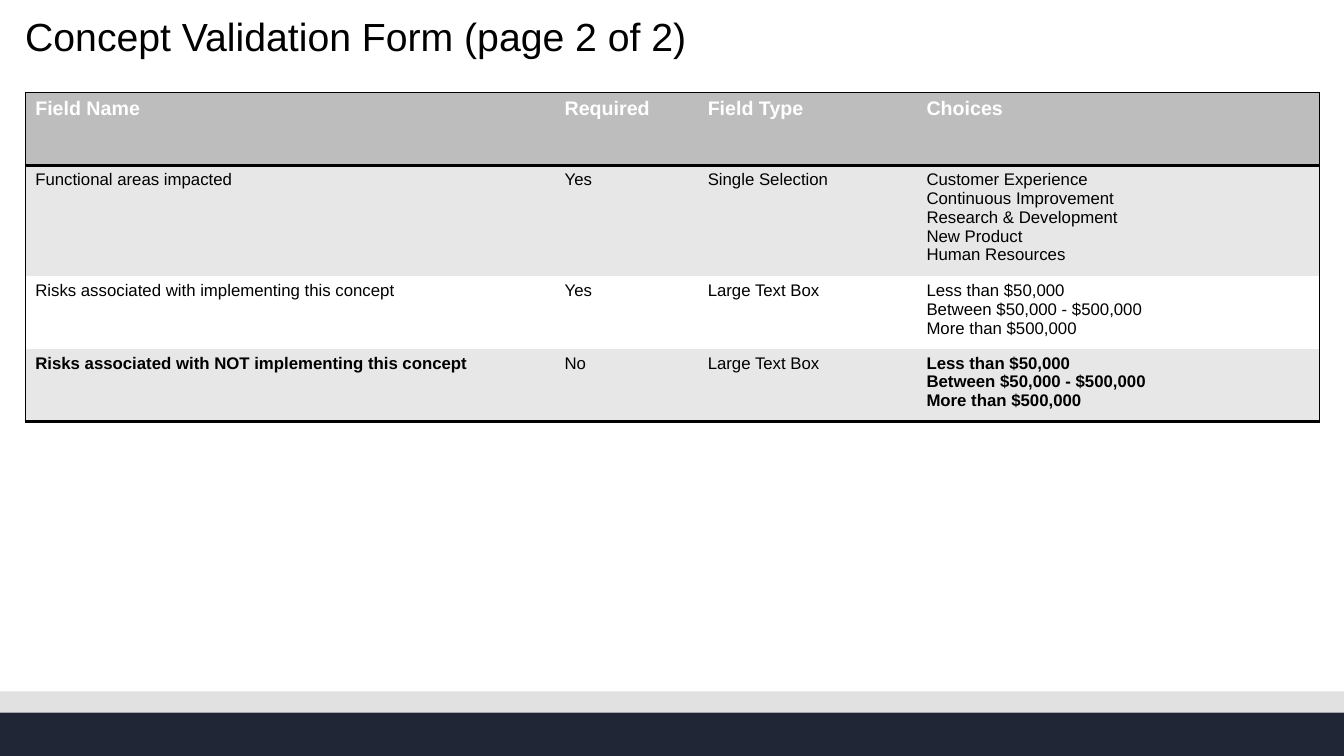
from pptx import Presentation
from pptx.dml.color import RGBColor
from pptx.enum.shapes import MSO_SHAPE
from pptx.enum.text import MSO_ANCHOR
from pptx.oxml import parse_xml
from pptx.oxml.ns import nsdecls
from pptx.util import Inches, Pt

WIDE, HIGH = 13.33, 7.5
COSTS = "Less than $50,000\nBetween $50,000 - $500,000\nMore than $500,000"
AREAS = ("Customer Experience\nContinuous Improvement\nResearch & Development\n"
         "New Product\nHuman Resources")
ROWS = [
    ("Field Name", "Required", "Field Type", "Choices"),
    ("Functional areas impacted", "Yes", "Single Selection", AREAS),
    ("Risks associated with implementing this concept", "Yes",
     "Large Text Box", COSTS),
    ("Risks associated with NOT implementing this concept", "No",
     "Large Text Box", COSTS),
]
FILLS = ["BDBDBD", "E7E7E7", "FFFFFF", "E7E7E7"]
COLS = [5.25, 1.42, 2.17, 4]
BOLD = {(0, 0), (0, 1), (0, 2), (0, 3), (3, 0), (3, 3)}


def color(code):
    return RGBColor.from_string(code)


def style(frame, size, code, bold=False):
    for para in frame.paragraphs:
        for run in para.runs:
            font = run.font
            font.name, font.size, font.bold = "Arial", Pt(size), bold
            font.color.rgb = color(code)


def add_bar(slide, top, height, code):
    bar = slide.shapes.add_shape(MSO_SHAPE.RECTANGLE, 0, Inches(top),
                                 Inches(WIDE), Inches(height))
    bar.shadow.inherit = False
    bar.fill.solid()
    bar.fill.fore_color.rgb = color(code)
    bar.line.fill.background()


def add_footer(slide, top):
    add_bar(slide, top, 0.21, "E1E1E1")
    add_bar(slide, top + 0.21, HIGH - top - 0.21, "212637")


def add_title(slide, left, top, width, height, text):
    box = slide.shapes.add_textbox(Inches(left), Inches(top),
                                   Inches(width), Inches(height))
    frame = box.text_frame
    frame.word_wrap = True
    frame.vertical_anchor = MSO_ANCHOR.TOP
    frame.margin_left = frame.margin_right = 0
    frame.margin_top = frame.margin_bottom = 0
    frame.text = text
    frame.paragraphs[0].line_spacing = 0.9
    style(frame, 28, "000000")


def set_edges(cell, edges):
    """Draw the four borders; a width of 0 hides one."""
    props = cell._tc.get_or_add_tcPr()
    for place, (side, width) in enumerate(edges.items()):
        paint = '<a:solidFill><a:srgbClr val="000000"/></a:solidFill>'
        if not width:
            paint = "<a:noFill/>"
        props.insert(place, parse_xml(
            f'<a:ln{side} {nsdecls("a")} w="{Pt(width)}">{paint}</a:ln{side}>'))


def add_form(slide, left, top, high):
    last, end = len(ROWS) - 1, len(COLS) - 1
    table = slide.shapes.add_table(
        len(ROWS), len(COLS), Inches(left), Inches(top),
        Inches(sum(COLS)), Inches(high * len(ROWS))).table
    for col, width in zip(table.columns, COLS):
        col.width = Inches(width)
    for r, texts in enumerate(ROWS):
        table.rows[r].height = Inches(high)
        for c, text in enumerate(texts):
            cell = table.cell(r, c)
            cell.text_frame.text = text
            size, code = (12, "000000") if r else (14, "FFFFFF")
            style(cell.text_frame, size, code, (r, c) in BOLD)
            cell.fill.solid()
            cell.fill.fore_color.rgb = color(FILLS[r])
            # Outer frame, with a heavy rule under the header and last row
            set_edges(cell, {"L": int(c == 0), "R": int(c == end),
                             "T": {0: 1, 1: 2}.get(r, 0),
                             "B": 2 if r in (0, last) else 0})


def main():
    deck = Presentation()
    deck.slide_width, deck.slide_height = Inches(WIDE), Inches(HIGH)
    slide = deck.slides.add_slide(deck.slide_layouts[6])
    add_footer(slide, 6.86)
    add_title(slide, 0.25, 0.17, 10.79, 0.58,
              "Concept Validation Form (page 2 of 2)")
    add_form(slide, 0.25, 0.92, 0.72)
    deck.save("out.pptx")


if __name__ == "__main__":
    main()
